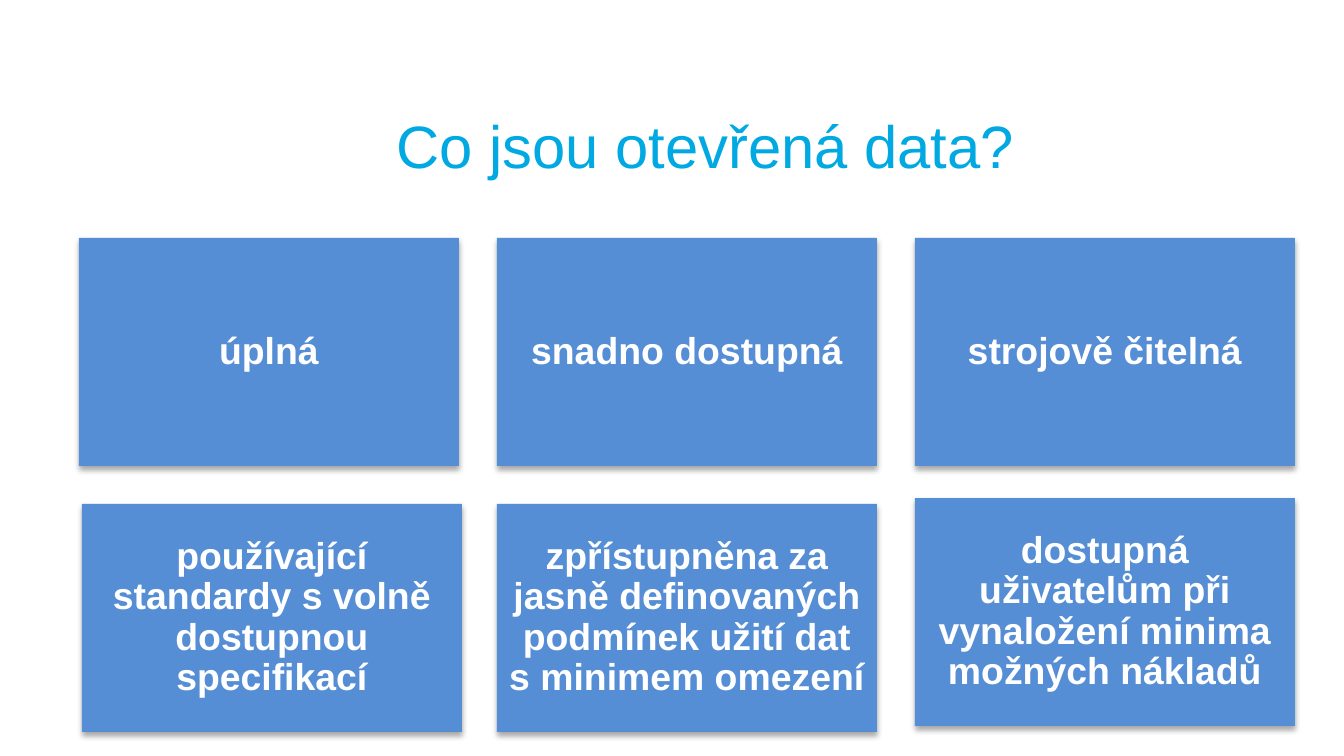
from lxml.etree import SubElement
from pptx import Presentation
from pptx.dml.color import RGBColor
from pptx.enum.shapes import MSO_SHAPE as Shape
from pptx.enum.text import MSO_ANCHOR as Anchor, PP_ALIGN as Align
from pptx.oxml.ns import qn
from pptx.util import Emu, Pt

TITLE = "Co jsou otevřená data?"
# Text of each card, with its shift from the grid in px
CARDS = [
    ("úplná", 0, 0),
    ("snadno dostupná", 0, 0),
    ("strojově čitelná", 0, 0),
    ("používající standardy s volně dostupnou specifikací", 3, 0),
    ("zpřístupněna za jasně definovaných podmínek užití dat s minimem omezení", 0, 0),
    ("dostupná uživatelům při vynaložení minima možných nákladů", 0, -6),
]
COLUMNS = 3
GRID_LEFT, GRID_TOP = 79, 238
CARD_WIDTH, CARD_HEIGHT, GAP = 380, 228, 38


def px(length):
    return Emu(round(length * 914400 / 134.4))


def color(value):
    return RGBColor.from_string(value)


def write(shape, text, size, fill, bold=False, align=Align.LEFT, margin=Pt(6), spacing=1.0):
    frame = shape.text_frame
    frame.word_wrap = True
    frame.vertical_anchor = Anchor.MIDDLE
    frame.margin_left = frame.margin_right = margin
    frame.margin_top = frame.margin_bottom = margin
    paragraph = frame.paragraphs[0]
    paragraph.alignment = align
    paragraph.line_spacing = spacing
    run = paragraph.add_run()
    run.text = text
    run.font.name = "Arial"
    run.font.size = Pt(size)
    run.font.bold = bold
    run.font.color.rgb = color(fill)


def add_shadow(shape):
    shape.shadow.inherit = False
    effects = shape.element.spPr.find(qn("a:effectLst"))
    shadow = SubElement(effects, qn("a:outerShdw"), blurRad=str(Pt(3.1)),
                        dist=str(Pt(1.8)), dir="5400000", rotWithShape="0")
    black = SubElement(shadow, qn("a:srgbClr"), val="000000")
    SubElement(black, qn("a:alpha"), val="35000")


presentation = Presentation()
presentation.slide_width, presentation.slide_height = px(1344), px(756)
slide = presentation.slides.add_slide(presentation.slide_layouts[5])

# Title
title = slide.shapes.title
title.left, title.top, title.width, title.height = px(383), px(82), px(857), px(126)
write(title, TITLE, 32, "00A9E2", margin=Pt(7.2))

# Cards in a grid
for index, (text, shift_x, shift_y) in enumerate(CARDS):
    row, column = divmod(index, COLUMNS)
    left = GRID_LEFT + column * (CARD_WIDTH + GAP) + shift_x
    top = GRID_TOP + row * (CARD_HEIGHT + GAP) + shift_y
    card = slide.shapes.add_shape(Shape.RECTANGLE, px(left), px(top),
                                  px(CARD_WIDTH), px(CARD_HEIGHT))
    card.fill.solid()
    card.fill.fore_color.rgb = color("558ED5")
    card.line.fill.background()
    add_shadow(card)
    write(card, text, 20, "FFFFFF", bold=True, align=Align.CENTER, spacing=0.9)

presentation.save("out.pptx")
